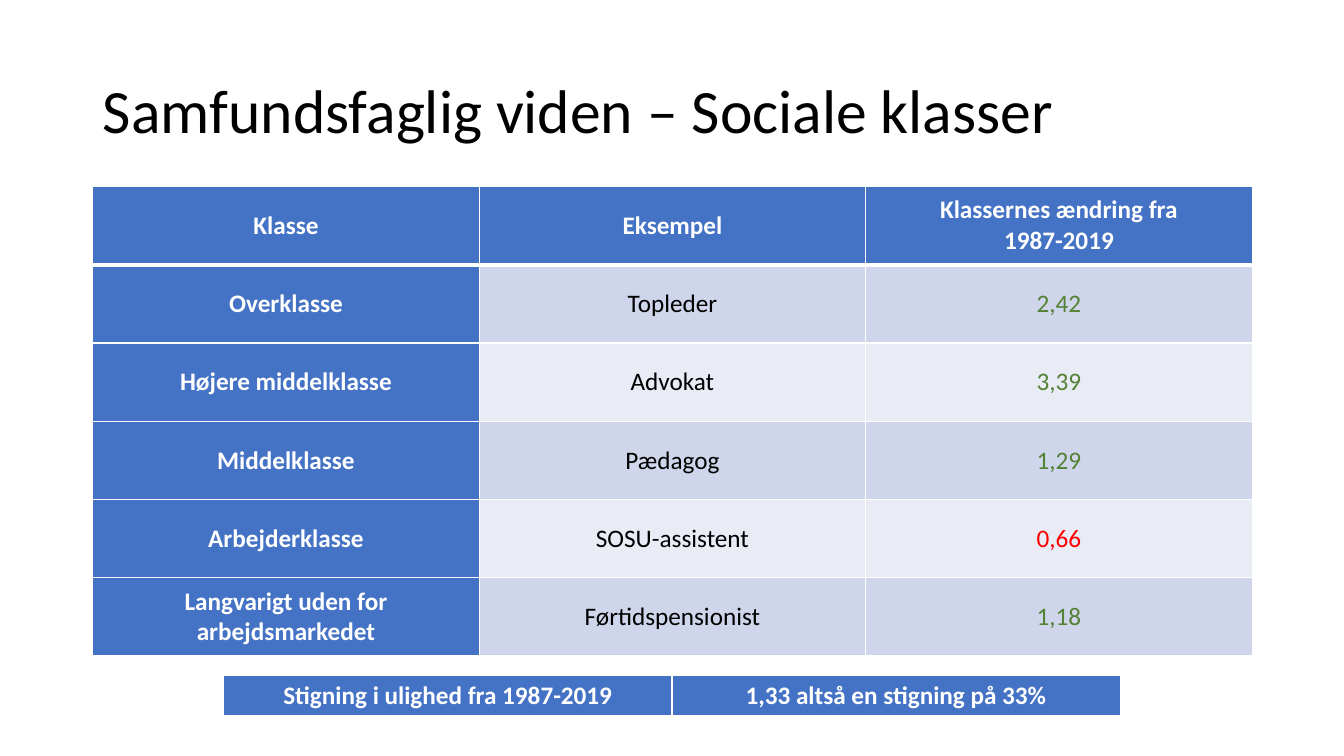
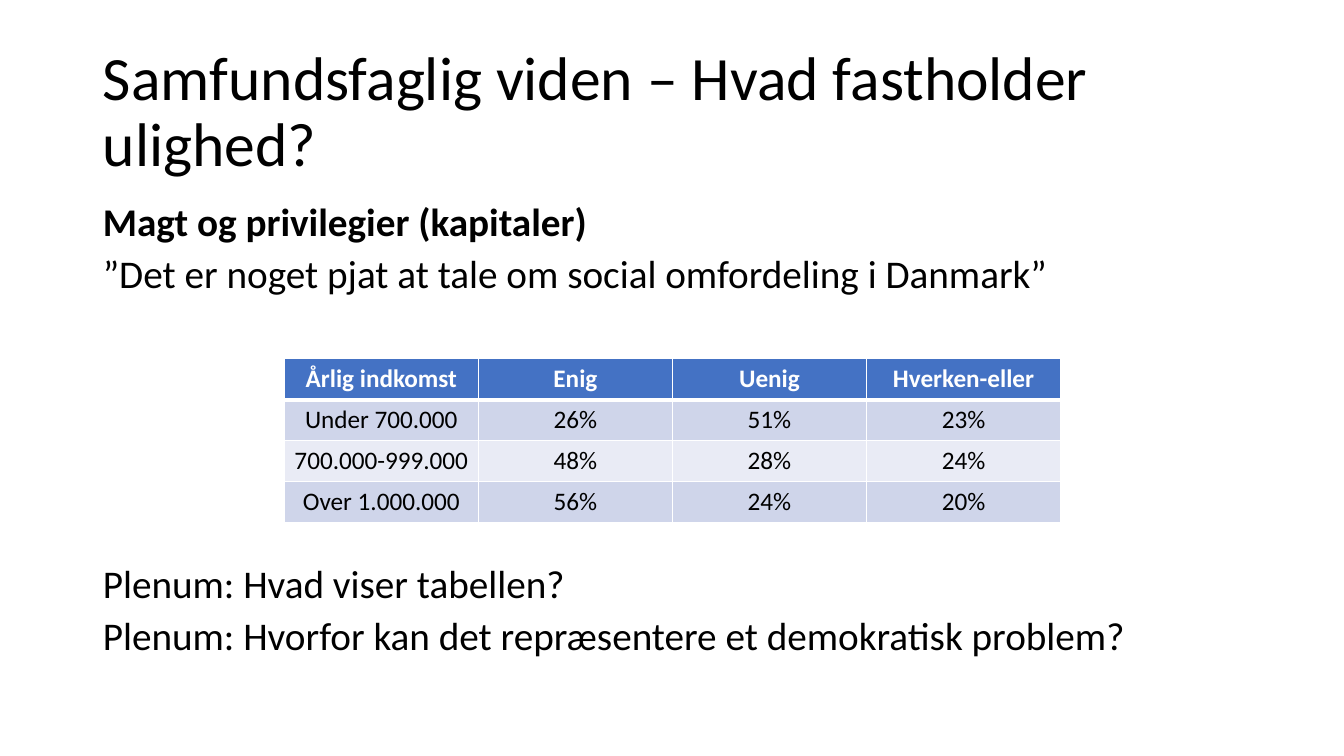
from lxml.etree import SubElement
from pptx import Presentation
from pptx.dml.color import RGBColor
from pptx.enum.text import MSO_ANCHOR, MSO_AUTO_SIZE, PP_ALIGN
from pptx.oxml import parse_xml
from pptx.oxml.ns import nsdecls, qn
from pptx.util import Inches, Pt

COLORS = {
    "white": "FFFFFF", "black": "000000", "blue": "4472C4",
    "dark_band": "CFD5EA", "light_band": "E9EBF5",
    "green": "548235", "red": "FF0000",
}
LEFT, WIDTH = 0.92, 11.5
BODY_GAP = 10
TABLE_GAP = 194.5


def rgb(name):
    return RGBColor.from_string(COLORS[name])


def apply(obj, values):
    for name, value in values.items():
        setattr(obj, name, value)


class Deck:
    """Holds the shared style and the slide being built."""

    font = {"name": "Calibri"}
    title_font = {**font, "size": Pt(44), "bold": False}
    body_font = {**font, "size": Pt(28)}
    cell_font = {**font, "size": Pt(18)}

    def __init__(self):
        self.prs = Presentation()
        apply(self.prs, {"slide_width": Inches(13.33), "slide_height": Inches(7.5)})
        self.s = None

    def format_runs(self, p, font, color):
        for r in p.runs:
            apply(r.font, font)
            r.font.color.rgb = rgb(color)

    def place(self, sp, top, height, anchor):
        apply(sp, {"left": Inches(LEFT), "top": Inches(top),
                   "width": Inches(WIDTH), "height": Inches(height)})
        apply(sp.text_frame, {"word_wrap": True, "vertical_anchor": anchor,
                              "auto_size": MSO_AUTO_SIZE.NONE})

    def slide(self, title, layout):
        self.s = self.prs.slides.add_slide(self.prs.slide_layouts.get_by_name(layout))
        sp = self.s.shapes.title
        self.place(sp, 0.4, 1.45, MSO_ANCHOR.MIDDLE)
        sp.text_frame.text = title
        p = sp.text_frame.paragraphs[0]
        apply(p, {"alignment": PP_ALIGN.LEFT, "line_spacing": 0.9})
        self.format_runs(p, self.title_font, "black")

    def body(self, lines):
        sp = self.s.placeholders[1]
        self.place(sp, 2, 4.76, MSO_ANCHOR.TOP)
        tf = sp.text_frame
        tf.text = "\n".join(text for text, _, _ in lines)
        for p, (_, bold, gap) in zip(tf.paragraphs, lines):
            apply(p, {"line_spacing": 0.8, "space_before": Pt(gap)})
            pPr = p._p.get_or_add_pPr()
            pPr.set("marL", "0")
            pPr.set("indent", "0")
            SubElement(pPr, qn("a:buNone"))
            self.format_runs(p, {**self.body_font, "bold": bold}, "black")

    def borders(self, cell, top, bottom):
        tcPr = cell._tc.get_or_add_tcPr()
        sides = {"lnL": 1, "lnR": 1, "lnT": top, "lnB": bottom}
        for i, (side, width) in enumerate(sides.items()):
            tcPr.insert(i, parse_xml(
                f'<a:{side} {nsdecls("a")} w="{Pt(width)}"><a:solidFill>'
                f'<a:srgbClr val="{COLORS["white"]}"/></a:solidFill></a:{side}>'))

    def table(self, rows, box, first_col=False, value_color=None,
              anchor=MSO_ANCHOR.MIDDLE):
        x, y, w, h = (Inches(v) for v in box)
        n_rows, n_cols = len(rows), len(rows[0])
        table = self.s.shapes.add_table(n_rows, n_cols, x, y, w, h).table
        for col in table.columns:
            col.width = int(w / n_cols)
        for i, row in enumerate(rows):
            table.rows[i].height = int(h / n_rows)
            for j, text in enumerate(row):
                cell = table.cell(i, j)
                head = i == 0 or (first_col and j == 0)
                band = "dark_band" if i % 2 else "light_band"
                color = "white" if head else "black"
                if value_color and i and j == n_cols - 1:
                    color = value_color(text)
                cell.text = text
                cell.vertical_anchor = anchor
                cell.fill.solid()
                cell.fill.fore_color.rgb = rgb("blue" if head else band)
                self.borders(cell, 3 if i == 1 else 1, 3 if i == 0 else 1)
                p = cell.text_frame.paragraphs[0]
                p.alignment = PP_ALIGN.CENTER
                self.format_runs(p, {**self.cell_font, "bold": head}, color)


def change_color(text):
    return "green" if float(text.replace(",", ".")) >= 1 else "red"


def main():
    deck = Deck()

    deck.slide("Samfundsfaglig viden – Sociale klasser", "Title Only")
    deck.table([
        ("Klasse", "Eksempel", "Klassernes ændring fra\v1987-2019"),
        ("Overklasse", "Topleder", "2,42"),
        ("Højere middelklasse", "Advokat", "3,39"),
        ("Middelklasse", "Pædagog", "1,29"),
        ("Arbejderklasse", "SOSU-assistent", "0,66"),
        ("Langvarigt uden for arbejdsmarkedet", "Førtidspensionist", "1,18"),
    ], (LEFT, 1.85, WIDTH, 4.66), first_col=True, value_color=change_color)
    deck.table([
        ("Stigning i ulighed fra 1987-2019", "1,33 altså en stigning på 33%"),
    ], (2.22, 6.7, 8.89, 0.41), anchor=MSO_ANCHOR.TOP)

    deck.slide("Samfundsfaglig viden – Hvad fastholder ulighed?", "Title and Content")
    deck.body([
        ("Magt og privilegier (kapitaler)", True, 0),
        ("”Det er noget pjat at tale om social omfordeling i Danmark”", False, BODY_GAP),
        ("Plenum: Hvad viser tabellen?", False, TABLE_GAP),
        ("Plenum: Hvorfor kan det repræsentere et demokratisk problem?", False, BODY_GAP),
    ])
    deck.table([
        ("Årlig indkomst", "Enig", "Uenig", "Hverken-eller"),
        ("Under 700.000", "26%", "51%", "23%"),
        ("700.000-999.000", "48%", "28%", "24%"),
        ("Over 1.000.000", "56%", "24%", "20%"),
    ], (2.82, 3.56, 7.7, 1.62))

    deck.prs.save("out.pptx")


if __name__ == "__main__":
    main()
